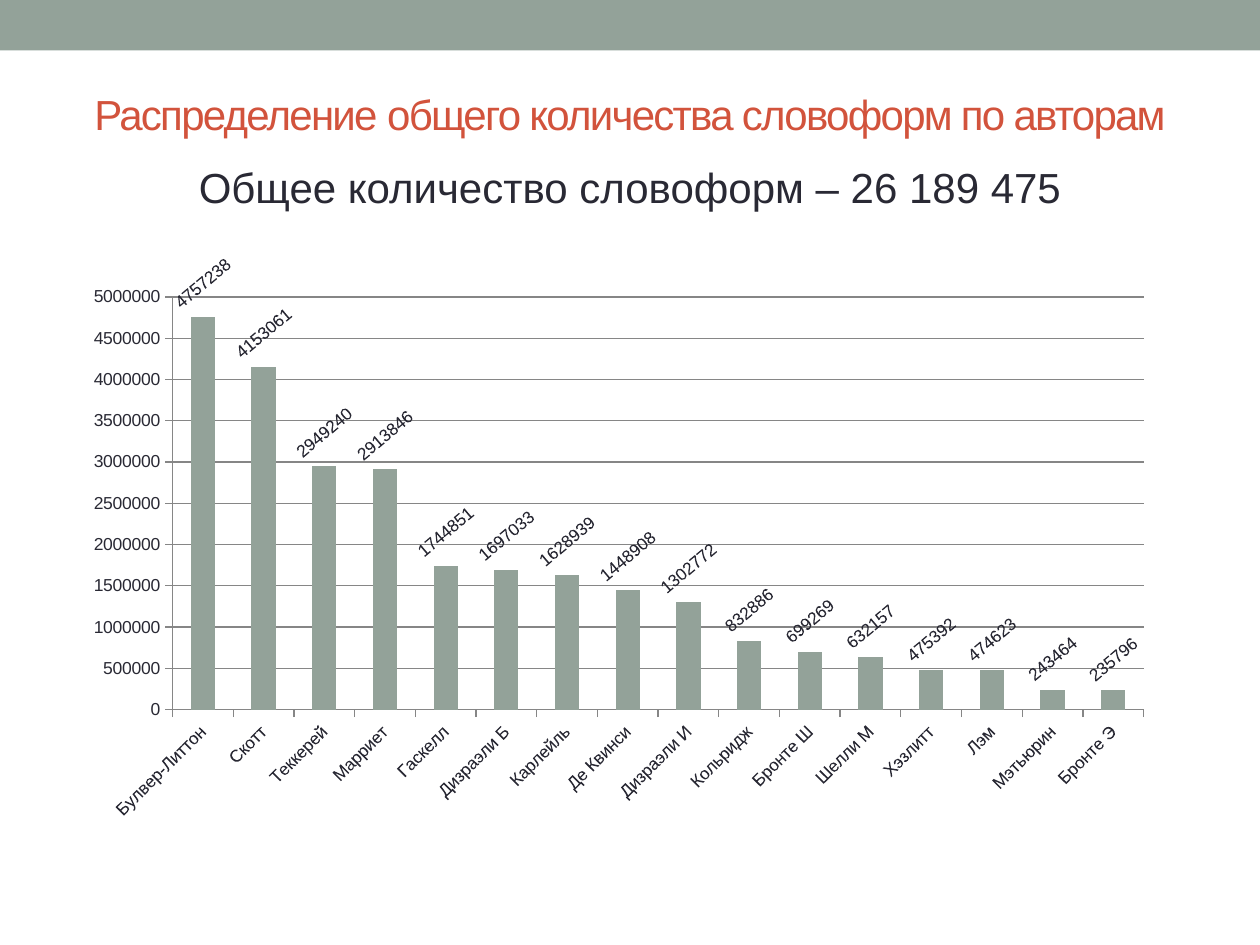
import pptx
import pptx.chart.data
import pptx.dml.color
import pptx.enum.chart
import pptx.enum.shapes
import pptx.enum.text
import pptx.oxml
import pptx.oxml.ns
import pptx.util

Pt = pptx.util.Pt
RGBColor = pptx.dml.color.RGBColor
SAGE = RGBColor(0x93, 0xA2, 0x99)
RUST = RGBColor(0xD2, 0x53, 0x3C)
INK = RGBColor(0x29, 0x29, 0x34)
AXIS_GRAY = RGBColor(0x86, 0x86, 0x86)
FONT = "Arial"

TITLE = [("Распределение", 24), (" ", 20),
         ("общего количества словоформ по авторам", 24)]
TOTAL = [("Общее количество словоформ – 26 189 475", 24)]
WORD_FORMS = {
    "Булвер-Литтон": 4757238, "Скотт": 4153061, "Теккерей": 2949240,
    "Марриет": 2913846, "Гаскелл": 1744851, "Дизраэли Б": 1697033,
    "Карлейль": 1628939, "Де Квинси": 1448908, "Дизраэли И": 1302772,
    "Кольридж": 832886, "Бронте Ш": 699269, "Шелли М": 632157,
    "Хэзлитт": 475392, "Лэм": 474623, "Мэтьюрин": 243464, "Бронте Э": 235796,
}
PLOT_AREA = {"x": 0.09, "y": 0.07, "w": 0.89, "h": 0.72}  # shares of the chart


def style_font(font, size, color):
    for name, value in {"name": FONT, "size": Pt(size), "bold": False}.items():
        setattr(font, name, value)
    font.color.rgb = color


def add_line_of_text(slide, box, runs, color, anchor, tracking=0, before=0):
    frame = slide.shapes.add_textbox(*map(Pt, box)).text_frame
    frame.word_wrap = True
    frame.vertical_anchor = anchor
    paragraph = frame.paragraphs[0]
    paragraph.alignment = pptx.enum.text.PP_ALIGN.CENTER
    paragraph.space_before = Pt(before)
    for text, size in runs:
        run = paragraph.add_run()
        run.text = text
        style_font(run.font, size, color)
        if tracking:
            run.font._element.set("spc", str(tracking * 100))


def rotate_text(parent, degrees):
    body = parent.find(".//" + pptx.oxml.ns.qn("a:bodyPr"))
    body.set("rot", str(degrees * 60000))
    body.set("vert", "horz")


def fix_plot_area(chart):
    area = chart._chartSpace.chart.plotArea
    for old in area.findall(pptx.oxml.ns.qn("c:layout")):
        area.remove(old)
    sizes = "".join(f'<c:{key} val="{share}"/>' for key, share in PLOT_AREA.items())
    area.insert(0, pptx.oxml.parse_xml(
        f'<c:layout {pptx.oxml.ns.nsdecls("c")}><c:manualLayout>'
        '<c:layoutTarget val="inner"/><c:xMode val="edge"/><c:yMode val="edge"/>'
        f'{sizes}</c:manualLayout></c:layout>'))


def add_author_chart(slide, box):
    enums = pptx.enum.chart
    data = pptx.chart.data.CategoryChartData()
    data.categories = list(WORD_FORMS)
    data.add_series("Series 1", list(WORD_FORMS.values()))
    chart = slide.shapes.add_chart(
        enums.XL_CHART_TYPE.COLUMN_CLUSTERED, *map(Pt, box), data).chart
    chart.has_legend = chart.has_title = False
    style_font(chart.font, 10, INK)
    fix_plot_area(chart)

    plot = chart.plots[0]
    plot.gap_width = 150
    plot.vary_by_categories = False
    columns = plot.series[0]
    columns.format.fill.solid()
    columns.format.fill.fore_color.rgb = SAGE
    labels = columns.data_labels
    labels.show_value = True
    labels.position = enums.XL_LABEL_POSITION.OUTSIDE_END
    style_font(labels.font, 10, INK)
    rotate_text(labels._element, -40)

    authors, counts = chart.category_axis, chart.value_axis
    counts.minimum_scale, counts.maximum_scale, counts.major_unit = 0, 5000000, 500000
    counts.has_major_gridlines = True
    for axis in (authors, counts):
        axis.major_tick_mark = enums.XL_TICK_MARK.OUTSIDE
        axis.minor_tick_mark = enums.XL_TICK_MARK.NONE
        style_font(axis.tick_labels.font, 10, INK)
    rotate_text(authors._element, -45)
    for part in (authors, counts, counts.major_gridlines):
        part.format.line.color.rgb = AXIS_GRAY
        part.format.line.width = Pt(0.75)


def main():
    deck = pptx.Presentation()
    deck.slide_width, deck.slide_height = Pt(720), Pt(540)
    slide = deck.slides.add_slide(deck.slide_layouts[6])

    band = slide.shapes.add_shape(
        pptx.enum.shapes.MSO_SHAPE.RECTANGLE, 0, 0, deck.slide_width, Pt(28.8))
    band.shadow.inherit = False
    band.fill.solid()
    band.fill.fore_color.rgb = SAGE
    band.line.fill.background()

    anchors = pptx.enum.text.MSO_ANCHOR
    add_line_of_text(slide, (36, 41.8, 648, 46.8), TITLE, RUST, anchors.MIDDLE, tracking=-1)
    add_line_of_text(slide, (36, 88.6, 648, 421.2), TOTAL, INK, anchors.TOP, before=4.8)
    add_author_chart(slide, (42.5, 145.4, 623.5, 329))
    deck.save("out.pptx")


if __name__ == "__main__":
    main()
